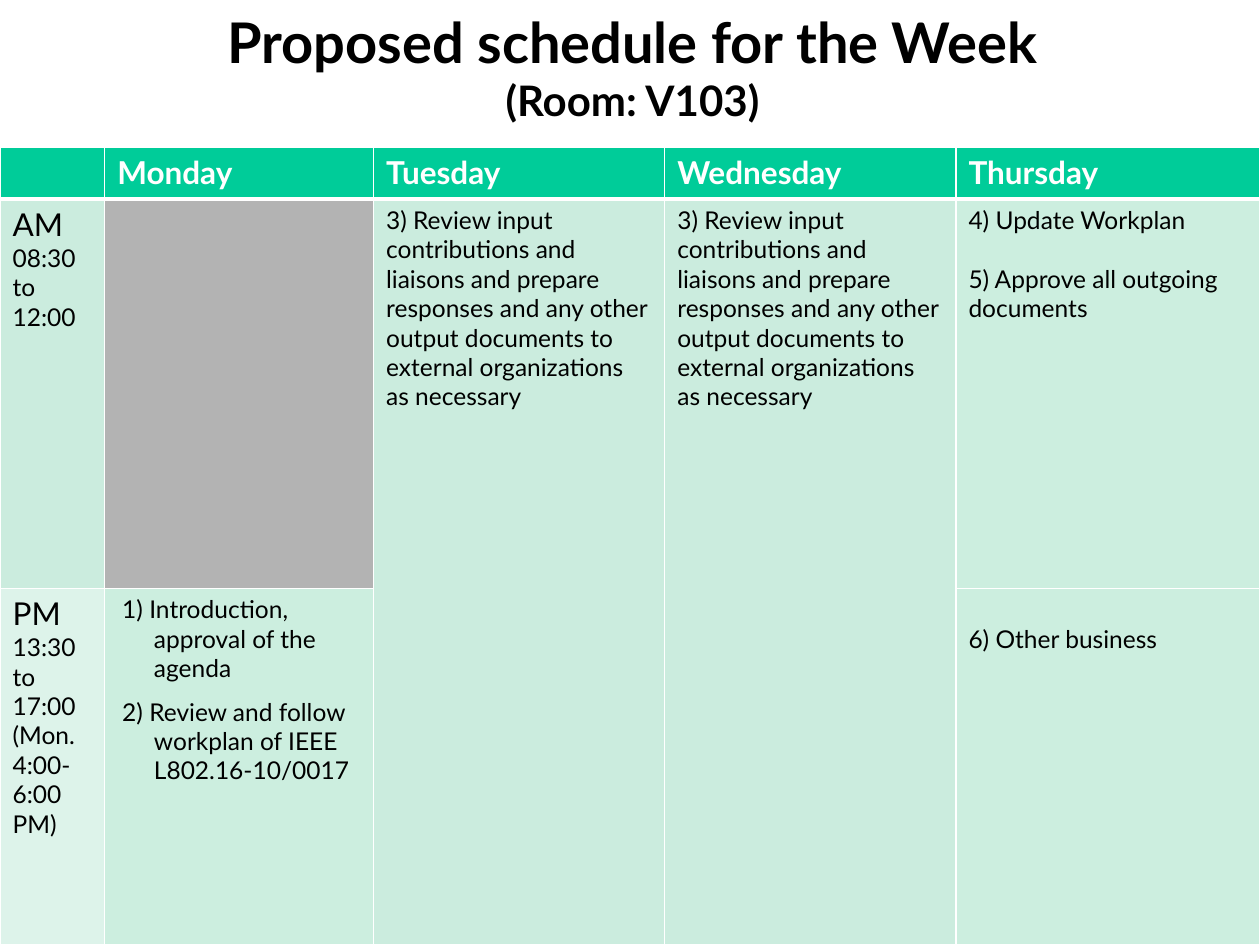
"""Build the weekly meeting schedule slide."""
from lxml import etree
from pptx import Presentation
from pptx import util as u
from pptx.dml.color import RGBColor
from pptx.enum import text
from pptx.oxml.ns import qn

THEME = {
    "font": "Lato",
    "black": "000000", "white": "FFFFFF", "header": "00CC99", "blocked": "B3B3B3",
    "mint": "CBECDE", "leaf": "CCEEDF", "pale": "DDF3EA",
    "title": 32, "subtitle": 24, "head": 18, "body": 14,
    "thin": 1, "thick": 3,
}
TITLE = [("Proposed schedule for the Week", "title"), ("(Room: V103)", "subtitle")]
DAYS = ["", "Monday", "Tuesday", "Wednesday", "Thursday"]
REVIEW = ("3) Review input contributions and liaisons and prepare responses and any "
          "other output documents to external organizations as necessary")
AM = [["AM", "08:30 to 12:00"], [], [REVIEW], [REVIEW],
      ["4) Update Workplan", "5) Approve all outgoing documents"]]
PM = [["PM", "13:30 to 17:00", "(Mon. 4:00-6:00 PM)"],
      ["1) Introduction, approval of the agenda",
       "2) Review and follow workplan of IEEE L802.16-10/0017"],
      [], [], ["6) Other business"]]
ROWS = [[[day] if day else [] for day in DAYS], AM, PM]
FILLS = [["header"] * 5,
         ["mint", "blocked", "mint", "mint", "leaf"],
         ["pale", "leaf", "mint", "mint", "leaf"]]
FORMATS = {(1, 4): {"before": 17}, (2, 1): {"before": 8, "left": 0.74, "hang": 0.64}}
WIDTHS = [2.11, 5.42, 5.87, 5.87, 6.13]
HEIGHTS = [1.04, 7.85, 7.19]
TABLE_TOP = 2.97


def rgb(name):
    """Return a theme colour."""
    return RGBColor.from_string(THEME[name])


def add_text(p, txt, size="body", color="black", bold=False, before=0, left=0, hang=0):
    """Add a formatted run to a paragraph."""
    r = p.add_run()
    r.text = txt
    r.font.name, r.font.size = THEME["font"], u.Pt(THEME[size])
    r.font.bold, r.font.color.rgb = bold, rgb(color)
    if before:
        p.space_before = u.Pt(before)
    if left:
        pPr = p._p.get_or_add_pPr()
        pPr.set("marL", str(u.Cm(left)))
        pPr.set("indent", str(-u.Cm(hang)))


def set_borders(cell, row):
    """Draw white borders, heavier under the header row."""
    tcPr = cell._tc.get_or_add_tcPr()
    heavy = {0: "B", 1: "T"}.get(row)
    for i, side in enumerate("LRTB"):
        width = THEME["thick" if side == heavy else "thin"]
        ln = etree.Element(qn("a:ln" + side), w=str(u.Pt(width)))
        fill = etree.SubElement(ln, qn("a:solidFill"))
        etree.SubElement(fill, qn("a:srgbClr"), val=THEME["white"])
        tcPr.insert(i, ln)


def add_title(slide):
    """Place the two-line title."""
    sp = slide.shapes.add_textbox(u.Cm(1.27), 0, u.Cm(22.86), u.Cm(2.41))
    tf = sp.text_frame
    tf.word_wrap, tf.margin_top = True, u.Cm(0.15)
    p = tf.paragraphs[0]
    p.alignment = text.PP_ALIGN.CENTER
    for i, (line, size) in enumerate(TITLE):
        if i:
            p.add_line_break()
        add_text(p, line, size=size, bold=True, left=0.1)


def add_schedule(slide):
    """Place the timetable."""
    table = slide.shapes.add_table(
        len(ROWS), len(DAYS), 0, u.Cm(TABLE_TOP),
        u.Cm(sum(WIDTHS)), u.Cm(sum(HEIGHTS))).table
    for col, width in zip(table.columns, WIDTHS):
        col.width = u.Cm(width)
    for row, height in zip(table.rows, HEIGHTS):
        row.height = u.Cm(height)
    for i, row in enumerate(ROWS):
        for j, lines in enumerate(row):
            cell = table.cell(i, j)
            cell.fill.solid()
            cell.fill.fore_color.rgb = rgb(FILLS[i][j])
            set_borders(cell, i)
            tf = cell.text_frame
            for k, line in enumerate(lines):
                p = tf.add_paragraph() if k else tf.paragraphs[0]
                fmt = dict(FORMATS.get((i, j), {}))
                if i == 0:
                    fmt.update(size="head", color="white", bold=True)
                elif j == 0 and k == 0:
                    fmt["size"] = "head"
                if k == 0:
                    fmt.pop("before", None)
                add_text(p, line, **fmt)
    for j in (2, 3):
        table.cell(1, j).merge(table.cell(2, j))
    table.cell(2, 4).margin_top = u.Cm(0.72)


def main():
    """Build and save the presentation."""
    prs = Presentation()
    prs.slide_width, prs.slide_height = u.Cm(25.4), u.Cm(19.05)
    slide = prs.slides.add_slide(prs.slide_layouts[6])
    add_title(slide)
    add_schedule(slide)
    prs.save("out.pptx")


if __name__ == "__main__":
    main()
